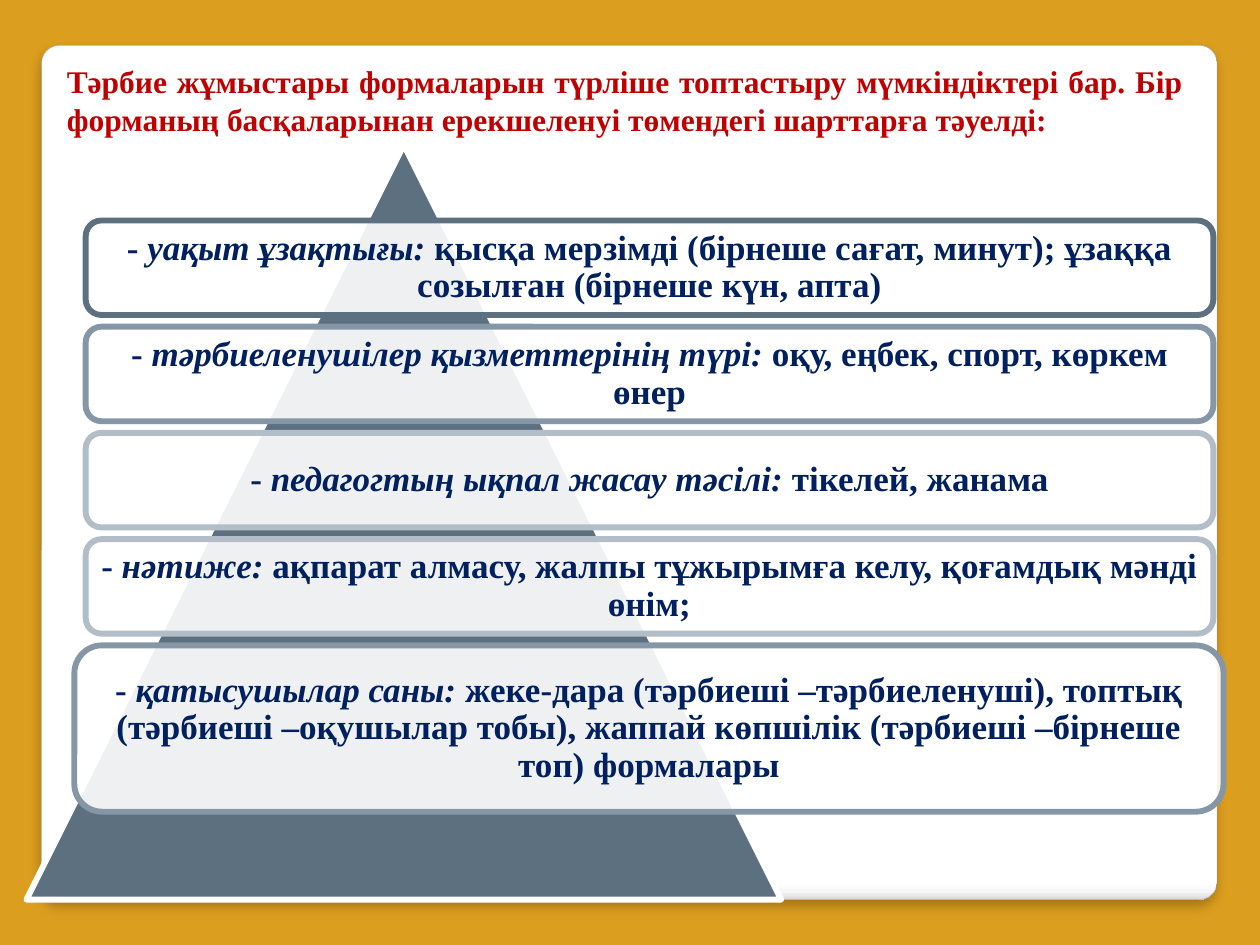
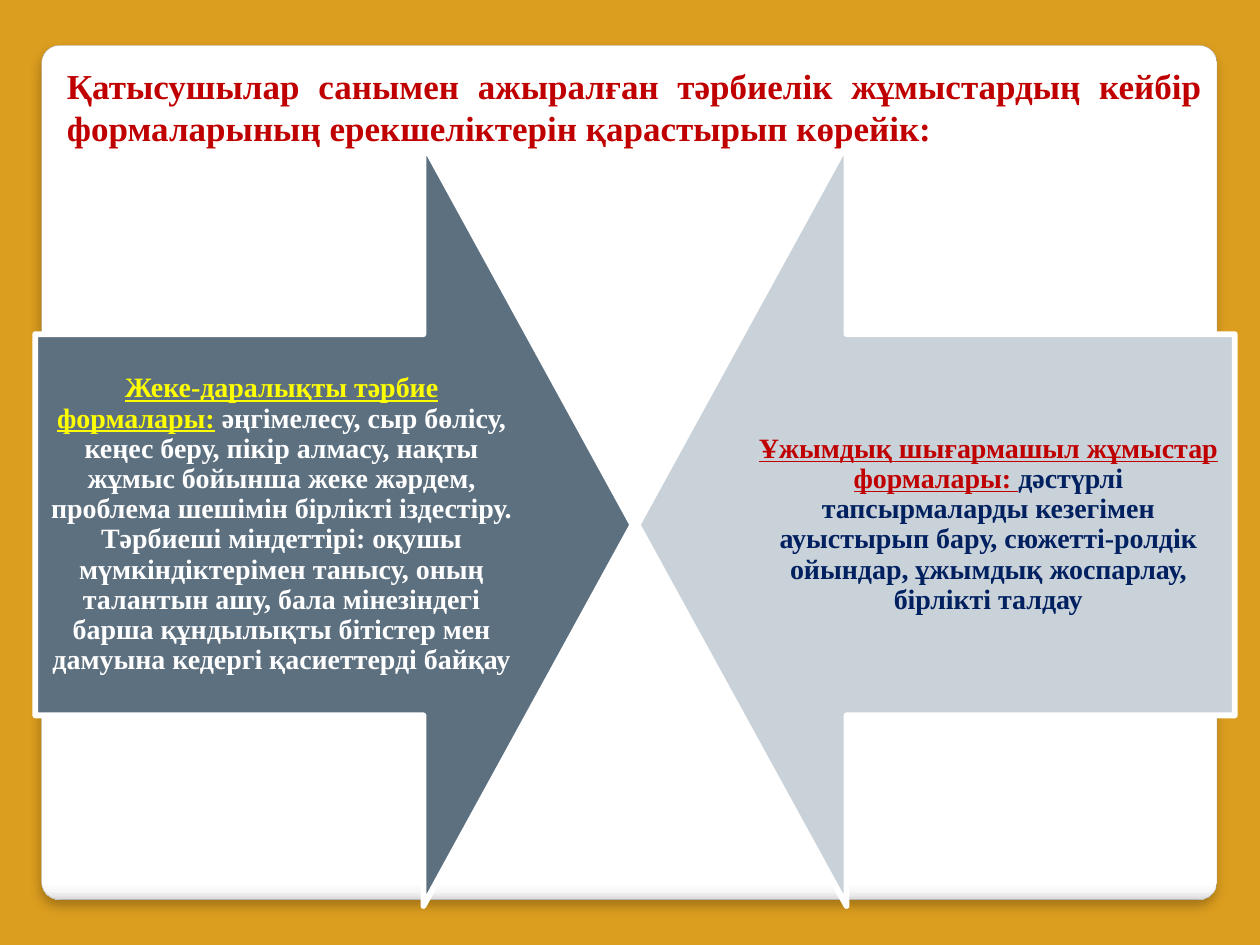
from dataclasses import dataclass

import lxml.etree
import pptx
import pptx.dml.color
import pptx.enum.shapes
import pptx.enum.text
import pptx.oxml.ns
import pptx.util

Inches = pptx.util.Inches
Pt = pptx.util.Pt
SHAPE = pptx.enum.shapes.MSO_SHAPE
ALIGN = pptx.enum.text.PP_ALIGN
ANCHOR = pptx.enum.text.MSO_ANCHOR
qn = pptx.oxml.ns.qn


@dataclass(frozen=True)
class Theme:
    font: str = "Times New Roman"
    gold: str = "DC9E1F"
    white: str = "FFFFFF"
    panel_line: str = "A4A4A4"
    shadow: str = "000000"
    panel_stops: tuple = ((0, "FFFFFF"), (98, "FFFFFF"), (99, "F7F7F7"), (100, "DADADA"))
    slate: str = "5D7080"
    steel: str = "8596A7"
    mist: str = "B2BDC8"
    pale: str = "C9D1D9"
    red: str = "C00000"
    navy: str = "002060"
    yellow: str = "FFFF00"
    row_size: int = 20
    arrow_size: int = 16
    outline: float = 3.35


def rgb(value):
    return pptx.dml.color.RGBColor.from_string(value)


def add_xml(parent, tag, **attributes):
    child = lxml.etree.SubElement(parent, qn(tag))
    for name, value in attributes.items():
        child.set(name, str(value))
    return child


def add_colour(parent, colour, alpha=None):
    node = add_xml(parent, "a:srgbClr", val=colour)
    if alpha is not None:
        add_xml(node, "a:alpha", val=alpha * 1000)


class SlideBuilder:
    def __init__(self, deck, theme):
        self.deck = deck
        self.theme = theme
        self.layout = deck.slide_layouts[5]
        self.page = None

    def style_layout(self):
        """Give the title-only layout its gold background and white panel."""
        fill = self.layout.background.fill
        fill.solid()
        fill.fore_color.rgb = rgb(self.theme.gold)
        panel = self.shape(SHAPE.ROUNDED_RECTANGLE, (0.33, 0.36, 9.33, 6.78),
                           self.theme.white, self.theme.panel_line, 0.16, (0.021,))
        panel.fill.gradient()
        panel.fill.gradient_angle = 270
        stops = next(panel.element.iter(qn("a:gsLst")))
        stops.clear()
        for position, colour in self.theme.panel_stops:
            add_colour(add_xml(stops, "a:gs", pos=position * 1000), colour)
        effects = next(panel.element.iter(qn("a:effectLst")))
        shadow = add_xml(effects, "a:outerShdw", blurRad=Pt(6), dist=Pt(4),
                         dir=90 * 60000, algn="t", rotWithShape=0)
        add_colour(shadow, self.theme.shadow, 25)
        next(panel.element.iter(qn("p:cNvPr"))).set("id", "20")
        self.layout.shapes.element.insert(2, panel.element)

    def new_page(self):
        self.page = self.deck.slides.add_slide(self.layout)

    def title(self, text, place, size):
        box = self.page.shapes.title
        box.left, box.top, box.width, box.height = map(Inches, place)
        self.text(box, [(text, self.theme.red, {})], size, ALIGN.JUSTIFY,
                  ANCHOR.TOP, (0.1, 0.05), 1.0)

    def shape(self, kind, place, fill, line, weight=None, adjustments=(), alpha=None):
        item = self.page.shapes.add_shape(kind, *map(Inches, place))
        item.shadow.inherit = False
        for index, value in enumerate(adjustments):
            item.adjustments[index] = value
        item.fill.solid()
        item.fill.fore_color.rgb = rgb(fill)
        if alpha is not None:
            colour = item.element.spPr.find(qn("a:solidFill"))[0]
            add_xml(colour, "a:alpha", val=alpha * 1000)
        item.line.color.rgb = rgb(line)
        item.line.width = Pt(weight or self.theme.outline)
        return item

    def text(self, item, spans, size, align, anchor, insets, spacing):
        """Fill one paragraph from (text, colour, font settings) spans."""
        frame = item.text_frame
        frame.word_wrap = True
        frame.auto_size = pptx.enum.text.MSO_AUTO_SIZE.NONE
        frame.vertical_anchor = anchor
        frame.margin_left = frame.margin_right = Inches(insets[0])
        frame.margin_top = frame.margin_bottom = Inches(insets[1])
        para = frame.paragraphs[0]
        para.alignment = align
        para.line_spacing = spacing
        for words, colour, settings in spans:
            span = para.add_run()
            span.text = words
            font = span.font
            font.name, font.size, font.bold = self.theme.font, Pt(size), True
            font.color.rgb = rgb(colour)
            for name, value in settings.items():
                setattr(font, name, value)

    def condition(self, place, line, name, detail):
        """Draw one see-through pyramid row."""
        row = self.shape(SHAPE.ROUNDED_RECTANGLE, place, self.theme.white, line, alpha=90)
        navy = self.theme.navy
        spans = [("- ", navy, {}), (name, navy, {"italic": True}), (" " + detail, navy, {})]
        self.text(row, spans, self.theme.row_size, ALIGN.CENTER, ANCHOR.MIDDLE,
                  (0.08, 0.08), 0.9)

    def arrow(self, kind, left, fill, heading, heading_colour, detail, detail_colour):
        item = self.shape(kind, (left, 1.14, 4.74, 6.05), fill, self.theme.white,
                          adjustments=(0.5, 0.35))
        spans = [(heading, heading_colour, {"underline": True}),
                 (detail, detail_colour, {})]
        self.text(item, spans, self.theme.arrow_size, ALIGN.CENTER, ANCHOR.MIDDLE,
                  (0.12, 0.12), 0.9)


def build_conditions(builder):
    theme = builder.theme
    builder.title("Тəрбие жұмыстары формаларын түрліше топтастыру мүмкіндіктері бар. "
                  "Бір форманың басқаларынан ерекшеленуі төмендегі шарттарға тəуелді:",
                  (0.43, 0.44, 9.06, 0.71), 18)
    builder.shape(SHAPE.ISOSCELES_TRIANGLE, (0.21, 1.15, 5.99, 5.99),
                  theme.slate, theme.white)
    rows = [
        (theme.slate, "уақыт ұзақтығы:",
         "қысқа мерзімді (бірнеше сағат, минут); ұзаққа созылған (бірнеше күн, апта)"),
        (theme.steel, "тəрбиеленушілер қызметтерінің түрі:",
         "оқу, еңбек, спорт, көркем өнер"),
        (theme.mist, "педагогтың ықпал жасау тəсілі:", "тікелей, жанама"),
        (theme.mist, "нəтиже:",
         "ақпарат алмасу, жалпы тұжырымға келу, қоғамдық мəнді өнім;"),
        (theme.steel, "қатысушылар саны:",
         "жеке-дара (тəрбиеші –тəрбиеленуші), топтық (тəрбиеші –оқушылар тобы), "
         "жаппай көпшілік (тəрбиеші –бірнеше топ) формалары"),
    ]
    first_top, pitch = 1.75, 0.843
    for index, (line, name, detail) in enumerate(rows):
        is_last = index == len(rows) - 1
        left, width, height = (0.59, 9.12, 1.32) if is_last else (0.68, 8.95, 0.75)
        place = (left, first_top + index * pitch, width, height)
        builder.condition(place, line, name, detail)


def build_forms(builder):
    theme = builder.theme
    builder.title("Қатысушылар санымен ажыралған тəрбиелік жұмыстардың кейбір "
                  "формаларының ерекшеліктерін қарастырып көрейік:",
                  (0.43, 0.46, 9.21, 0.77), 20)
    builder.arrow(SHAPE.RIGHT_ARROW, 0.28, theme.slate,
                  "Жеке-даралықты тəрбие формалары:", theme.yellow,
                  " əңгімелесу, сыр бөлісу, кеңес беру, пікір алмасу, нақты жұмыс "
                  "бойынша жеке жəрдем, проблема шешімін бірлікті іздестіру. Тəрбиеші "
                  "міндеттірі: оқушы мүмкіндіктерімен танысу, оның талантын ашу, бала "
                  "мінезіндегі барша құндылықты бітістер мен дамуына кедергі "
                  "қасиеттерді байқау", theme.white)
    builder.arrow(SHAPE.LEFT_ARROW, 5.06, theme.pale,
                  "Ұжымдық шығармашыл жұмыстар формалары: ", theme.red,
                  "дəстүрлі тапсырмаларды кезегімен ауыстырып бару, сюжетті-ролдік "
                  "ойындар, ұжымдық жоспарлау, бірлікті талдау", theme.navy)


def main():
    deck = pptx.Presentation()
    deck.slide_width, deck.slide_height = Inches(10), Inches(7.5)
    builder = SlideBuilder(deck, Theme())
    builder.new_page()
    builder.style_layout()
    build_conditions(builder)
    builder.new_page()
    build_forms(builder)
    deck.save("out.pptx")


if __name__ == "__main__":
    main()
